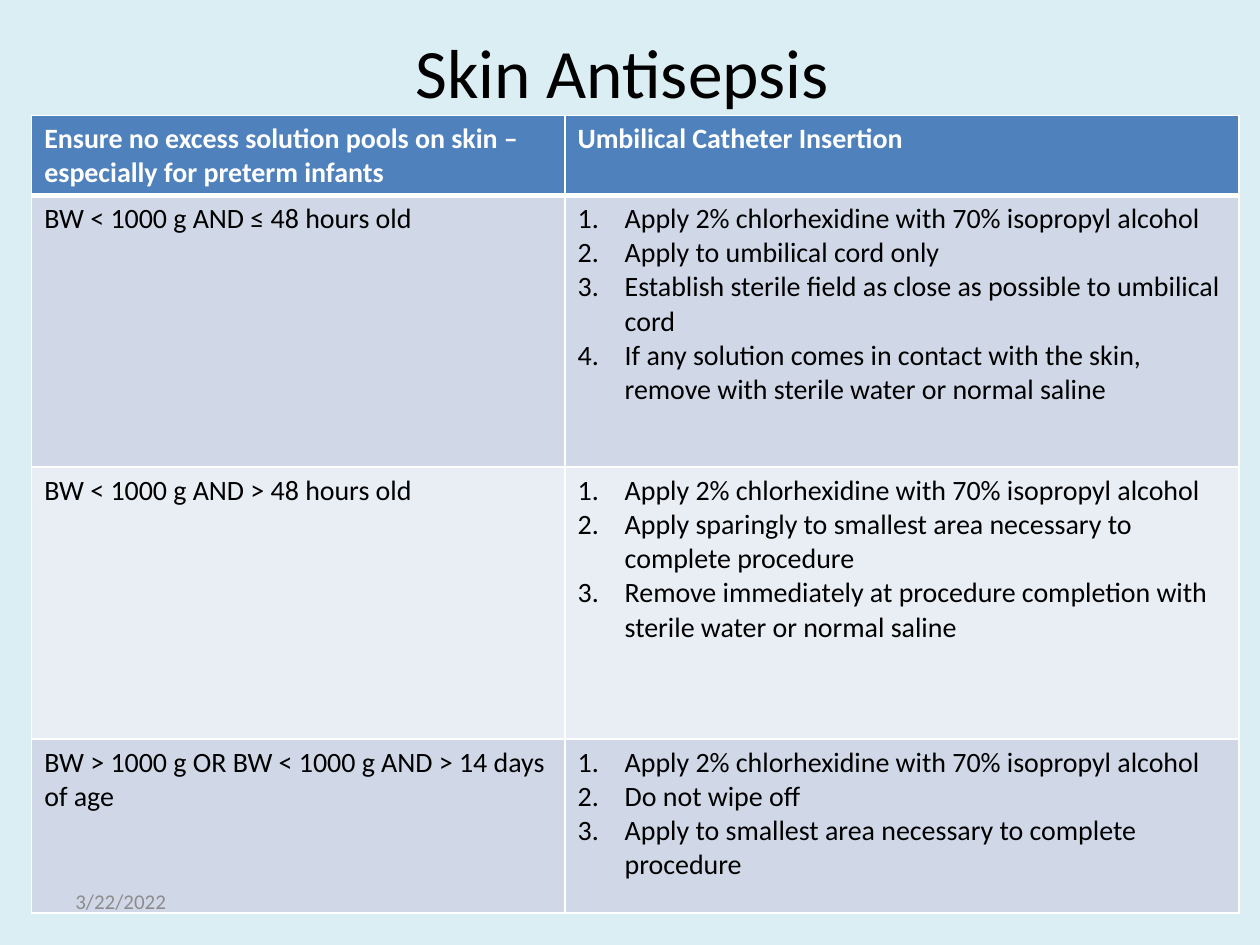
from dataclasses import dataclass

from lxml import etree
from pptx import Presentation
from pptx import util as u
from pptx.dml.color import RGBColor
from pptx.enum import text
from pptx.oxml import ns


@dataclass(frozen=True)
class Theme:
    font: str = "Calibri"
    background: str = "DBEEF4"
    header: str = "4F81BD"
    bands: tuple = ("D0D8E8", "E9EDF4")
    border: str = "FFFFFF"
    ink: str = "000000"
    header_ink: str = "FFFFFF"
    date_ink: str = "8C8C8C"
    title_size: float = 39.6
    table_size: float = 16
    date_size: float = 12


FIRST_STEP = "Apply 2% chlorhexidine with 70% isopropyl alcohol"
HEADINGS = (
    "Ensure no excess solution pools on skin – especially for preterm infants",
    "Umbilical Catheter Insertion",
)
PROTOCOLS = [
    ("BW < 1000 g AND ≤ 48 hours old", [
        FIRST_STEP,
        "Apply to umbilical cord only",
        "Establish sterile field as close as possible to umbilical cord",
        "If any solution comes in contact with the skin, remove with sterile water or normal saline",
    ]),
    ("BW < 1000 g AND > 48 hours old", [
        FIRST_STEP,
        "Apply sparingly to smallest area necessary to complete procedure",
        "Remove immediately at procedure completion with sterile water or normal saline",
    ]),
    ("BW > 1000 g OR BW < 1000 g AND > 14 days of age", [
        FIRST_STEP,
        "Do not wipe off",
        "Apply to smallest area necessary to complete procedure",
    ]),
]
COLUMN_WIDTHS = (10.75, 13.59)
ROW_HEIGHTS = (1.6, 5.48, 5.48, 3.51)


class SlideBuilder:
    def __init__(self, slide, theme):
        self.slide = slide
        self.theme = theme
        slide.background.fill.solid()
        slide.background.fill.fore_color.rgb = RGBColor.from_string(theme.background)

    def style(self, frame, size, ink, bold=False):
        for paragraph in frame.paragraphs:
            for run in paragraph.runs:
                run.font.name = self.theme.font
                run.font.size = u.Pt(size)
                run.font.bold = bold
                run.font.color.rgb = RGBColor.from_string(ink)

    def label(self, words, box, size, ink, align=text.PP_ALIGN.LEFT):
        frame = self.slide.shapes.add_textbox(*map(u.Cm, box)).text_frame
        frame.word_wrap = True
        frame.vertical_anchor = text.MSO_ANCHOR.MIDDLE
        frame.text = words
        frame.paragraphs[0].alignment = align
        self.style(frame, size, ink)

    def borders(self, cell, bottom):
        properties = cell._tc.get_or_add_tcPr()
        for side, points in (("L", 1), ("R", 1), ("T", 1), ("B", bottom)):
            edge = etree.SubElement(properties, ns.qn(f"a:ln{side}"), w=str(u.Pt(points)))
            paint = etree.SubElement(edge, ns.qn("a:solidFill"))
            etree.SubElement(paint, ns.qn("a:srgbClr"), val=self.theme.border)

    def number(self, paragraph):
        properties = paragraph._p.get_or_add_pPr()
        properties.set("marL", str(u.Cm(0.95)))
        properties.set("indent", str(-u.Cm(0.95)))
        etree.SubElement(properties, ns.qn("a:buFont"), typeface="+mj-lt")
        etree.SubElement(properties, ns.qn("a:buAutoNum"), type="arabicPeriod")

    def cell(self, cell, words, fill, ink, bold=False, bottom=1, numbered=False):
        self.borders(cell, bottom)
        cell.fill.solid()
        cell.fill.fore_color.rgb = RGBColor.from_string(fill)
        cell.text_frame.text = words
        if numbered:
            for paragraph in cell.text_frame.paragraphs:
                self.number(paragraph)
        self.style(cell.text_frame, self.theme.table_size, ink, bold)

    def protocol_table(self, left, top):
        theme = self.theme
        table = self.slide.shapes.add_table(
            len(ROW_HEIGHTS), len(COLUMN_WIDTHS), u.Cm(left), u.Cm(top),
            u.Cm(sum(COLUMN_WIDTHS)), u.Cm(sum(ROW_HEIGHTS)),
        ).table
        for column, width in zip(table.columns, COLUMN_WIDTHS):
            column.width = u.Cm(width)
        for row, height in zip(table.rows, ROW_HEIGHTS):
            row.height = u.Cm(height)
        for column, heading in enumerate(HEADINGS):
            self.cell(table.cell(0, column), heading, theme.header,
                      theme.header_ink, bold=True, bottom=3)
        for row, (infant, steps) in enumerate(PROTOCOLS, start=1):
            band = theme.bands[(row - 1) % len(theme.bands)]
            self.cell(table.cell(row, 0), infant, band, theme.ink)
            self.cell(table.cell(row, 1), "\n".join(steps), band, theme.ink, numbered=True)


def main():
    theme = Theme()
    deck = Presentation()
    deck.slide_width, deck.slide_height = u.Cm(25.4), u.Cm(19.05)
    builder = SlideBuilder(deck.slides.add_slide(deck.slide_layouts[6]), theme)
    builder.label("Skin Antisepsis ", (1.27, 0.76, 22.86, 1.35),
                  theme.title_size, theme.ink, text.PP_ALIGN.CENTER)
    builder.protocol_table(0.64, 2.33)
    builder.label("3/22/2022", (1.27, 17.66, 5.93, 1.01), theme.date_size, theme.date_ink)
    deck.save("out.pptx")


if __name__ == "__main__":
    main()
